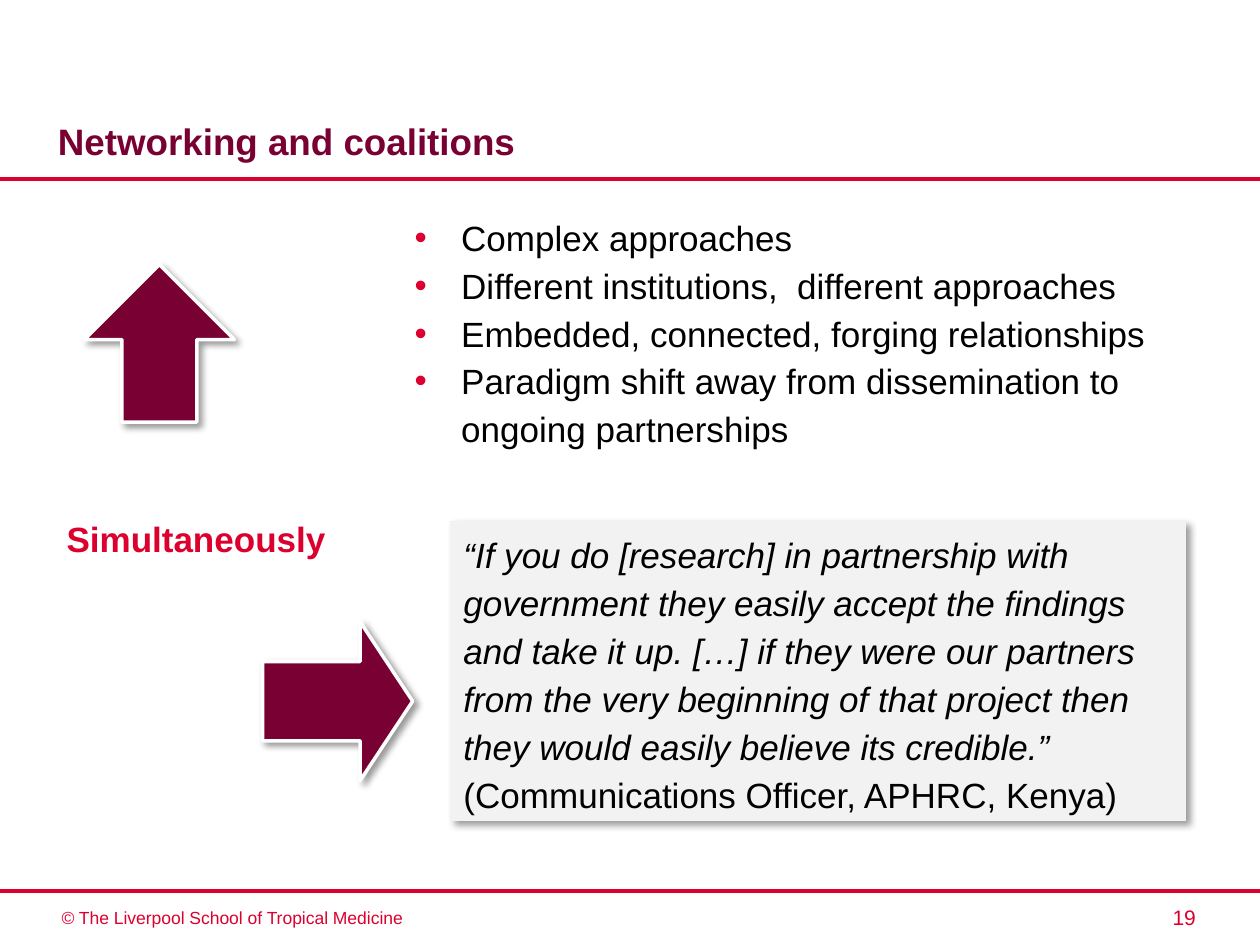
from dataclasses import dataclass

import pptx
import pptx.dml.color
import pptx.enum.shapes
import pptx.enum.text
import pptx.oxml
import pptx.oxml.ns
import pptx.util
from pptx.util import Inches

SHAPES = pptx.enum.shapes.MSO_SHAPE
ALIGN = pptx.enum.text.PP_ALIGN
ANCHOR = pptx.enum.text.MSO_ANCHOR


@dataclass(frozen=True)
class Theme:
    font: str = "Arial"
    red: str = "DC002E"
    maroon: str = "790033"
    black: str = "000000"
    white: str = "FFFFFF"
    panel: str = "F2F2F2"
    title_size: int = 21
    body_size: int = 20
    number_size: int = 12
    copyright_size: int = 10
    line_spacing: float = 1.14


THEME = Theme()

BULLETS = [
    "Complex approaches",
    "Different institutions,  different approaches",
    "Embedded, connected, forging relationships",
    "Paradigm shift away from dissemination to ongoing partnerships",
]
QUOTE = (
    "“If you do [research] in partnership with government they easily accept "
    "the findings and take it up. […] if they were our partners from the very "
    "beginning of that project then they would easily believe its credible.”"
)
SPEAKER = "(Communications Officer, APHRC, Kenya)"


def rgb(color):
    return pptx.dml.color.RGBColor.from_string(color)


def add_xml(parent, xml):
    declared = xml.replace(" ", f" {pptx.oxml.ns.nsdecls('a')} ", 1)
    parent.append(pptx.oxml.parse_xml(declared))


def style(paragraph, size, color, bold=False, italic=False):
    font = paragraph.font
    font.name, font.size = THEME.font, pptx.util.Pt(size)
    font.bold, font.italic = bold, italic
    font.color.rgb = rgb(color)


def place(shape, left, top, width, height):
    shape.left, shape.top = Inches(left), Inches(top)
    shape.width, shape.height = Inches(width), Inches(height)


def add_rule(slide, top):
    rule = slide.shapes.add_connector(
        pptx.enum.shapes.MSO_CONNECTOR.STRAIGHT,
        0, Inches(top), Inches(10), Inches(top))
    rule.line.color.rgb = rgb(THEME.red)
    rule.line.width = pptx.util.Pt(2.25)
    add_xml(rule._element.spPr, "<a:effectLst />")


def add_label(slide, text, box, size, bold=False, align=ALIGN.LEFT):
    label = slide.shapes.add_textbox(*map(Inches, box))
    label.text_frame.word_wrap = True
    paragraph = label.text_frame.paragraphs[0]
    paragraph.text = text
    paragraph.alignment = align
    style(paragraph, size, THEME.red, bold)


def add_raised_shape(slide, preset, box, fill, outline, outline_width):
    """Add a filled shape that casts a soft shadow to the lower right."""
    shape = slide.shapes.add_shape(preset, *map(Inches, box))
    shape.fill.solid()
    shape.fill.fore_color.rgb = rgb(fill)
    shape.line.color.rgb = rgb(outline)
    shape.line.width = pptx.util.Pt(outline_width)
    add_xml(shape._element.spPr, (
        '<a:effectLst ><a:outerShdw blurRad="50800" dist="38100" dir="2700000" '
        'algn="tl" rotWithShape="0"><a:srgbClr val="000000">'
        '<a:alpha val="40000"/></a:srgbClr></a:outerShdw></a:effectLst>'))
    return shape


def add_arrow(slide, preset, box, rotation):
    arrow = add_raised_shape(slide, preset, box, THEME.maroon, THEME.white, 2)
    arrow.rotation = rotation
    return arrow


def fill_title(title, text):
    place(title, 0.36, 0.67, 7.08, 0.67)
    title.text_frame.vertical_anchor = ANCHOR.BOTTOM
    title.text_frame.auto_size = pptx.enum.text.MSO_AUTO_SIZE.NONE
    paragraph = title.text_frame.paragraphs[0]
    paragraph.text = text
    paragraph.alignment = ALIGN.LEFT
    style(paragraph, THEME.title_size, THEME.maroon, bold=True)


def fill_bullets(body, items):
    place(body, 3.19, 1.62, 6.38, 2.36)
    frame = body.text_frame
    frame.auto_size = pptx.enum.text.MSO_AUTO_SIZE.NONE
    frame.text = "\n".join(items)
    for paragraph in frame.paragraphs:
        properties = paragraph._p.get_or_add_pPr()
        properties.set("marL", str(Inches(0.37)))
        properties.set("indent", str(-Inches(0.37)))
        add_xml(properties, f'<a:buClr ><a:srgbClr val="{THEME.red}"/></a:buClr>')
        add_xml(properties, '<a:buFont typeface="Arial"/>')
        add_xml(properties, '<a:buChar char="•"/>')
        paragraph.line_spacing = THEME.line_spacing
        paragraph.space_before = pptx.util.Pt(0)
        style(paragraph, THEME.body_size, THEME.black)


def add_quote(slide, quote, speaker):
    panel = add_raised_shape(slide, SHAPES.RECTANGLE, (3.58, 4.14, 5.83, 2.37),
                             THEME.panel, THEME.panel, 0.75)
    frame = panel.text_frame
    frame.word_wrap = True
    frame.vertical_anchor = ANCHOR.TOP
    frame.text = f"{quote}\n{speaker}"
    for paragraph, italic in zip(frame.paragraphs, (True, False)):
        paragraph.alignment = ALIGN.LEFT
        paragraph.line_spacing = THEME.line_spacing
        style(paragraph, THEME.body_size, THEME.black, italic=italic)


def main():
    deck = pptx.Presentation()
    deck.slide_width, deck.slide_height = Inches(10), Inches(7.5)
    slide = deck.slides.add_slide(deck.slide_layouts[1])

    add_label(slide, "19", (7.76, 7.13, 1.83, 0.3), THEME.number_size,
              align=ALIGN.RIGHT)
    add_label(slide, "© The Liverpool School of Tropical Medicine",
              (0.39, 7.15, 3.95, 0.27), THEME.copyright_size)
    for top in (1.42, 7.07):
        add_rule(slide, top)

    fill_title(slide.shapes.title, "Networking and coalitions")
    partnership_arrow = add_arrow(
        slide, SHAPES.DOWN_ARROW, (2.05, 4.97, 1.26, 1.19), 270)
    partnership_arrow.adjustments[1] = 0.35
    add_arrow(slide, SHAPES.LEFT_ARROW, (0.64, 2.13, 1.25, 1.19), 90)
    fill_bullets(slide.placeholders[1], BULLETS)
    add_label(slide, "Simultaneously", (0.43, 4.06, 3.23, 0.44),
              THEME.body_size, bold=True)
    add_quote(slide, QUOTE, SPEAKER)
    deck.save("out.pptx")


if __name__ == "__main__":
    main()
